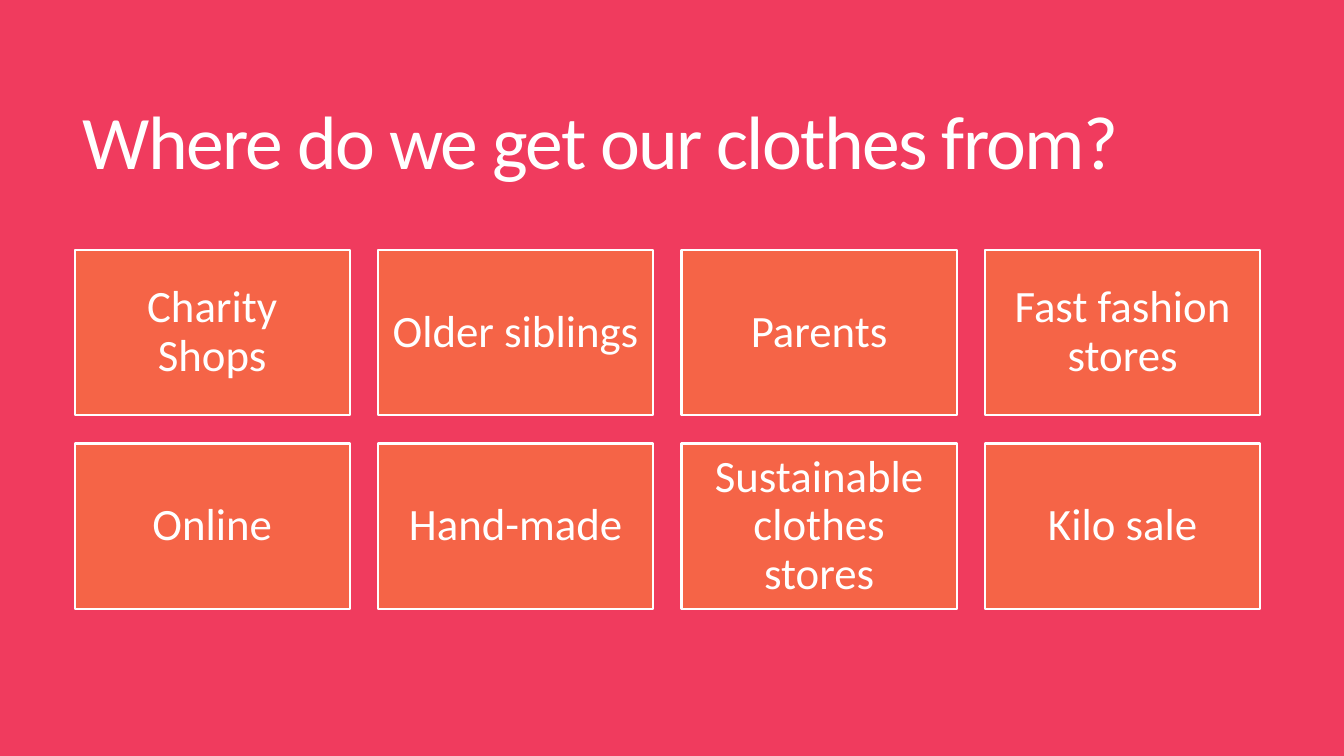
from dataclasses import dataclass

from pptx import Presentation
from pptx.dml.color import RGBColor
from pptx.enum.shapes import MSO_SHAPE
from pptx.enum.text import MSO_ANCHOR, MSO_AUTO_SIZE, PP_ALIGN
from pptx.util import Inches, Pt


@dataclass(frozen=True)
class Theme:
    back: RGBColor = RGBColor(0xF0, 0x3B, 0x5E)
    card: RGBColor = RGBColor(0xF5, 0x64, 0x47)
    white: RGBColor = RGBColor(0xFF, 0xFF, 0xFF)
    font: str = "Calibri"
    title: Pt = Pt(54)
    label: Pt = Pt(32)


theme = Theme()


def set_text(shape, text, size, align, spacing):
    frame = shape.text_frame
    frame.text = text
    frame.word_wrap = True
    frame.auto_size = MSO_AUTO_SIZE.NONE
    frame.vertical_anchor = MSO_ANCHOR.MIDDLE
    para = frame.paragraphs[0]
    para.alignment = align
    para.line_spacing = spacing
    para.space_before = Pt(0)
    font = para.runs[0].font
    font.name = theme.font
    font.size = size
    font.color.rgb = theme.white


deck = Presentation()
deck.slide_width = Inches(13.33)
deck.slide_height = Inches(7.5)
slide = deck.slides.add_slide(deck.slide_layouts[5])
slide.background.fill.solid()
slide.background.fill.fore_color.rgb = theme.back

title = slide.shapes.title
title.left, title.top = Inches(0.72), Inches(0.55)
title.width, title.height = Inches(11.78), Inches(1.81)
set_text(title, "Where do we get our clothes from?", theme.title, PP_ALIGN.LEFT, 0.85)
para = title.text_frame.paragraphs[0]
para.space_after = Pt(6)
para.runs[0].font._element.set("spc", "-120")

sources = [
    ["Charity Shops", "Older siblings", "Parents", "Fast fashion stores"],
    ["Online", "Hand-made", "Sustainable clothes stores", "Kilo sale"],
]
left, top = 0.74, 2.48
width, height = 2.73, 1.64
gap = 0.28
pad = Inches(0.13)

for row, names in enumerate(sources):
    for col, name in enumerate(names):
        card = slide.shapes.add_shape(
            MSO_SHAPE.RECTANGLE,
            Inches(left + col * (width + gap)),
            Inches(top + row * (height + gap)),
            Inches(width),
            Inches(height),
        )
        card.shadow.inherit = False
        card.fill.solid()
        card.fill.fore_color.rgb = theme.card
        card.line.color.rgb = theme.white
        card.line.width = Pt(1.5)
        set_text(card, name, theme.label, PP_ALIGN.CENTER, 0.9)
        frame = card.text_frame
        frame.margin_left = frame.margin_right = pad
        frame.margin_top = frame.margin_bottom = pad

deck.save("out.pptx")
